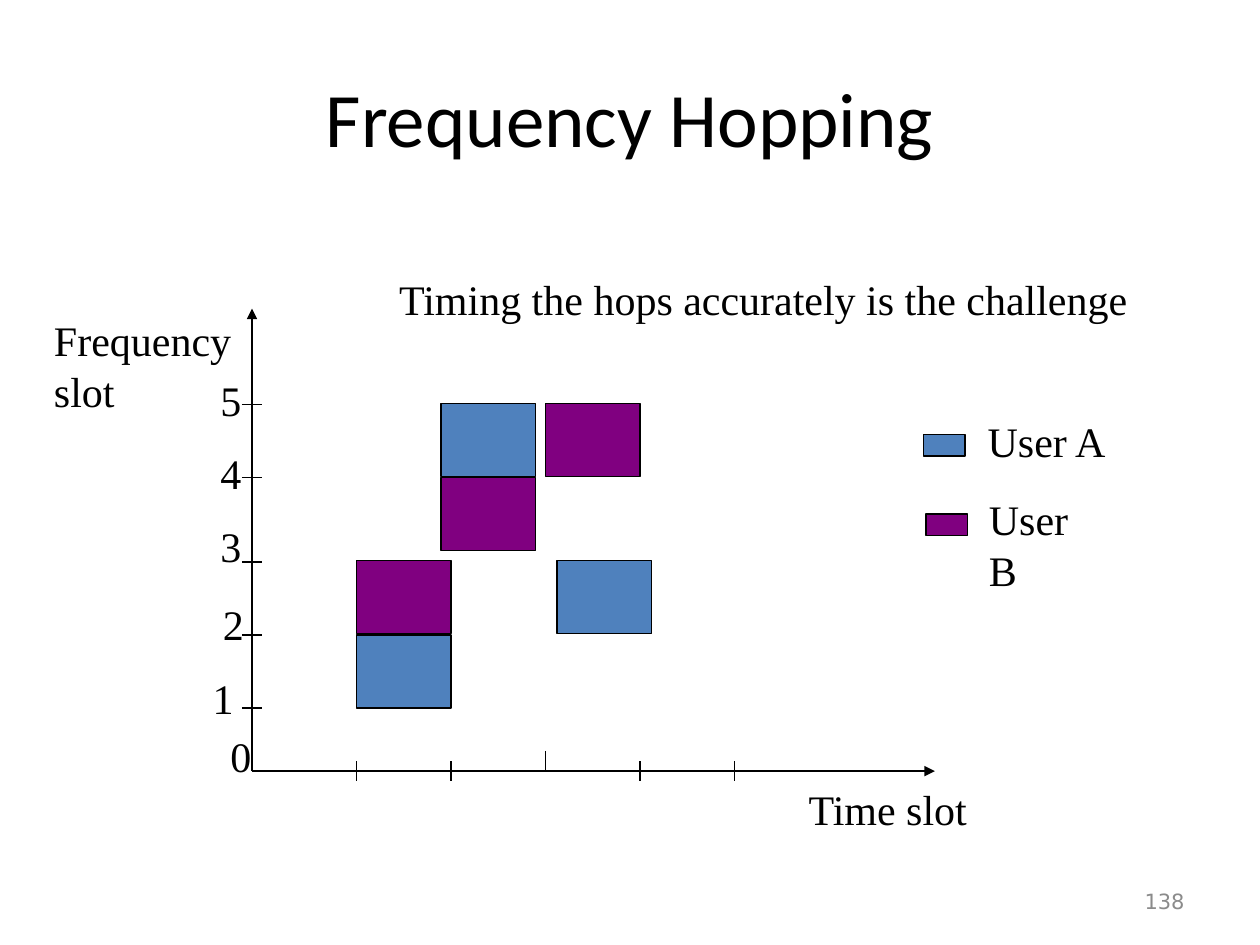
from pptx import Presentation
from pptx.util import Inches, Pt
from pptx.dml.color import RGBColor as Rgb
from pptx.enum.shapes import MSO_CONNECTOR as Conn, MSO_SHAPE as Shape
from pptx.enum.text import MSO_ANCHOR as Anchor, PP_ALIGN as Align
from pptx.oxml.ns import qn
from lxml.etree import SubElement as Sub

HUES = {"ink": "000000", "grey": "8B8B8B", "A": "4F81BD", "B": "800080"}
SERIF = "Times New Roman"

LABELS = [
    (["Time slot"], 6.32, 6.17, 1.47, 0.5),
    (["Frequency", "slot"], 0.33, 2.45, 1.61, 0.9),
    (["Timing the hops accurately is the challenge"], 3.07, 2.12, 6, 0.5),
    (["User A"], 7.74, 3.25, 1.15, 0.5),
    (["User B"], 7.75, 3.87, 1.13, 0.5),
]
DIGITS = [(1.73, 5.75), (1.59, 5.29), (1.67, 4.7),
          (1.65, 4.08), (1.65, 3.5), (1.65, 2.92)]
HOPS = [("A", 2.83, 5.04), ("A", 4.42, 4.45), ("A", 3.5, 3.2),
        ("B", 2.83, 4.45), ("B", 3.5, 3.79), ("B", 4.33, 3.2)]
KEYS = [("A", 7.33, 3.45), ("B", 7.35, 4.08)]

LEFT, BASE, TOP, RIGHT = 2, 6.12, 2.45, 7.42
HALF = 0.08
TIMES = [2.83 + 0.75 * i for i in range(5)]
MID = 2
FREQS = [5.62, 5.04, 4.46, 3.79, 3.21]

deck = Presentation()
deck.slide_width, deck.slide_height = Inches(10), Inches(7.5)
slide = deck.slides.add_slide(deck.slide_layouts[6])


def hue(name):
    return Rgb.from_string(HUES[name])


def line(x1, y1, x2, y2, arrow=False):
    item = slide.shapes.add_connector(
        Conn.STRAIGHT, Inches(x1), Inches(y1), Inches(x2), Inches(y2))
    item.line.color.rgb = hue("ink")
    item.line.width = Pt(0.75)
    if arrow:
        Sub(item.line._get_or_add_ln(), qn("a:tailEnd"), type="triangle")
    Sub(item._element.spPr, qn("a:effectLst"))


def block(user, x, y, w, h):
    item = slide.shapes.add_shape(
        Shape.RECTANGLE, Inches(x), Inches(y), Inches(w), Inches(h))
    item.shadow.inherit = False
    item.fill.solid()
    item.fill.fore_color.rgb = hue(user)
    item.line.color.rgb = hue("ink")
    item.line.width = Pt(0.75)


def text(rows, x, y, w, h, size=24, face=SERIF, tint="ink",
         align=Align.LEFT, anchor=Anchor.TOP, wrap=False):
    box = slide.shapes.add_textbox(Inches(x), Inches(y), Inches(w), Inches(h))
    frame = box.text_frame
    frame.word_wrap = wrap
    frame.vertical_anchor = anchor
    for i, row in enumerate(rows):
        para = frame.add_paragraph() if i else frame.paragraphs[0]
        para.alignment = align
        run = para.add_run()
        run.text = row
        run.font.size = Pt(size)
        run.font.name = face
        run.font.color.rgb = hue(tint)


text(["138"], 7.17, 6.95, 2.33, 0.4, 12, "DejaVu Sans", "grey",
     Align.RIGHT, Anchor.MIDDLE, True)
text(["Frequency Hopping"], 0.5, 0.3, 9, 1.25, 44, "Calibri", "ink",
     Align.CENTER, Anchor.MIDDLE, True)

line(LEFT, BASE, LEFT, TOP, True)
line(LEFT, BASE, RIGHT, BASE, True)
for i, x in enumerate(TIMES):
    mid = BASE - HALF if i == MID else BASE
    line(x, mid - HALF, x, mid + HALF)
line(LEFT, 5.29, LEFT, 5.45)
for y in FREQS:
    line(LEFT - HALF, y, LEFT + HALF, y)

for user, x, y in HOPS:
    block(user, x, y, 0.75, 0.58)
for user, x, y in KEYS:
    block(user, x, y, 0.33, 0.17)
for label in LABELS:
    text(*label)
for i, (x, y) in enumerate(DIGITS):
    text([str(i)], x, y, 0.36, 0.5)

deck.save("out.pptx")
